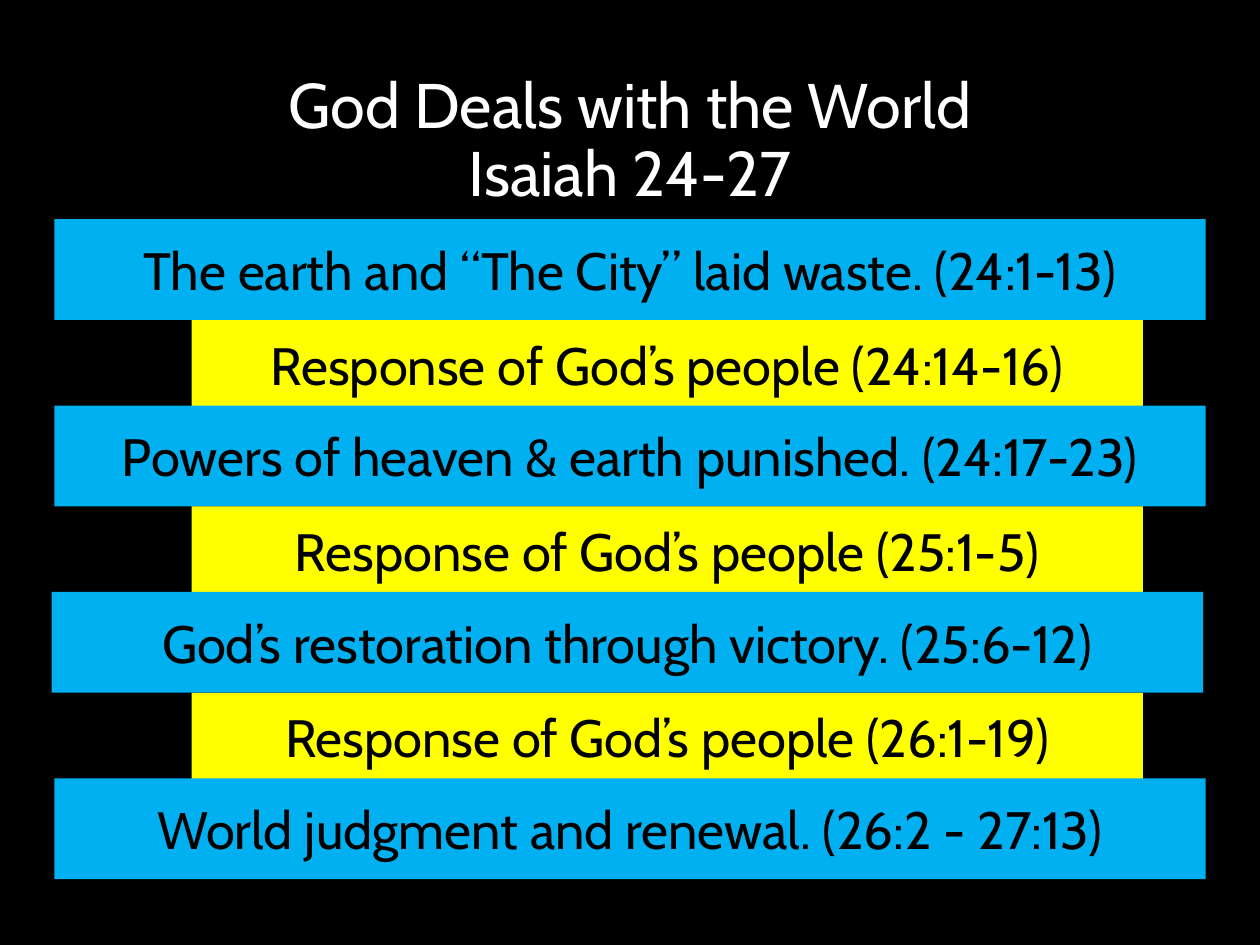
import pptx
import pptx.util
import pptx.dml.color
import pptx.enum.shapes
import pptx.enum.text

Pt = pptx.util.Pt

# Content: each band is (kind, left, text)
TITLE = "God Deals with the World\vIsaiah 24-27"
BANDS = [
    ("event", 31, "The earth and “The City” laid waste. (24:1-13)"),
    ("response", 109.5, "Response of God’s people (24:14-16)"),
    ("event", 31, "Powers of heaven & earth punished. (24:17-23)"),
    ("response", 109.5, "Response of God’s people (25:1-5)"),
    ("event", 29.5, "God’s restoration through victory. (25:6-12)"),
    ("response", 109.5, "Response of God’s people (26:1-19)"),
    ("event", 31, "World judgment and renewal. (26:2 - 27:13)"),
]

# Format: a response starts right below its event, the next event overlaps it
STYLES = {
    "event": {"offset": 0, "width": 658, "height": 57.6, "fill": "00B0F0"},
    "response": {"offset": 57.6, "width": 543.6, "height": 50.4, "fill": "FFFF00"},
}
FIRST_TOP, PAIR_PITCH = 125.3, 106.5
CENTRED = {"alignment": pptx.enum.text.PP_ALIGN.CENTER}
FRAME = {
    "word_wrap": True,
    "auto_size": pptx.enum.text.MSO_AUTO_SIZE.NONE,
    "vertical_anchor": pptx.enum.text.MSO_ANCHOR.MIDDLE,
}


def set_attributes(target, values):
    for name, value in values.items():
        setattr(target, name, value)


def paint(fill, colour):
    fill.solid()
    fill.fore_color.rgb = pptx.dml.color.RGBColor.from_string(colour)


def write(shape, text, size, colour, paragraph_format):
    shape.text_frame.text = text
    set_attributes(shape.text_frame, FRAME)
    paragraph = shape.text_frame.paragraphs[0]
    set_attributes(paragraph, paragraph_format)
    for run in paragraph.runs:
        set_attributes(run.font, {"name": "Cabin", "size": Pt(size)})
        paint(run.font.fill, colour)


# Slide and background
presentation = pptx.Presentation()
set_attributes(presentation, {"slide_width": Pt(720), "slide_height": Pt(540)})
slide = presentation.slides.add_slide(presentation.slide_layouts[5])
paint(slide.background.fill, "000000")

# Title
title = slide.shapes.title
set_attributes(title, {"left": Pt(49.5), "top": Pt(28.8),
                       "width": Pt(621), "height": Pt(104.4)})
write(title, TITLE, 36, "FFFFFF", {**CENTRED, "line_spacing": 0.9})

# Alternating bands
for index, (kind, left, text) in enumerate(BANDS):
    style = STYLES[kind]
    top = FIRST_TOP + index // 2 * PAIR_PITCH + style["offset"]
    band = slide.shapes.add_shape(
        pptx.enum.shapes.MSO_SHAPE.RECTANGLE,
        Pt(left), Pt(top), Pt(style["width"]), Pt(style["height"]))
    band.shadow.inherit = False
    paint(band.fill, style["fill"])
    band.line.fill.background()
    write(band, text, 30, "000000", CENTRED)

presentation.save("out.pptx")
